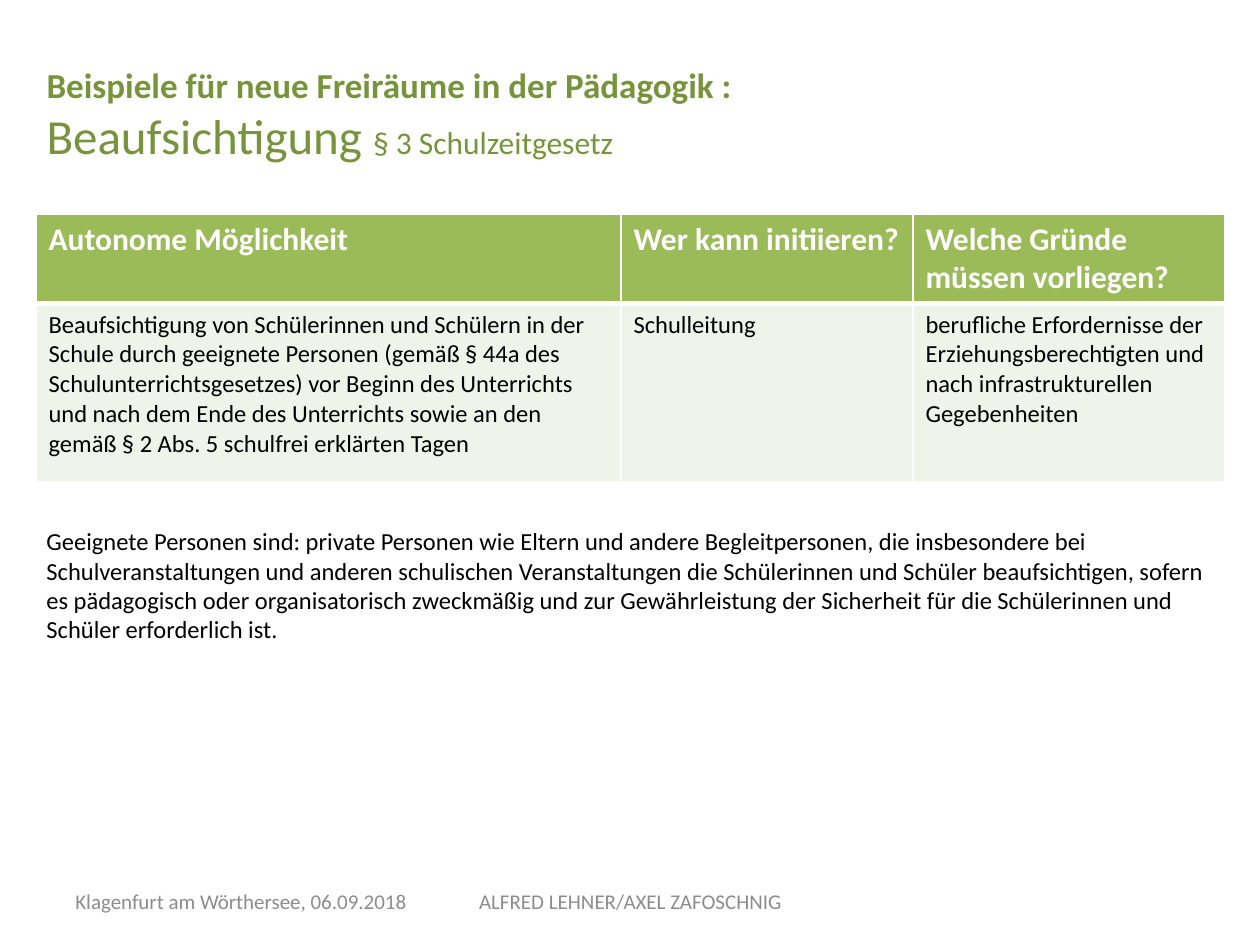
import lxml.etree
import pptx
import pptx.dml.color
import pptx.enum.text
import pptx.oxml.ns
import pptx.util

PX = 914400 / 126
THEME = {
    "font": "Calibri",
    "title": "77933C", "header": "9BBB59", "body": "EFF3EA",
    "white": "FFFFFF", "black": "000000", "footer": "8C8C8C",
    "title_size": 20, "subject_size": 28, "header_size": 18,
    "body_size": 14, "footer_size": 12,
}


def px(*lengths):
    return [pptx.util.Emu(round(length * PX)) for length in lengths]


def style_run(run, size, color, bold=False):
    run.font.name = THEME["font"]
    run.font.size = pptx.util.Pt(THEME[size])
    run.font.color.rgb = pptx.dml.color.RGBColor.from_string(THEME[color])
    run.font.bold = bold


presentation = pptx.Presentation()
presentation.slide_width, presentation.slide_height = px(1260, 945)
slide = presentation.slides.add_slide(presentation.slide_layouts[5])

# Title
title = slide.shapes.title
title.left, title.top, title.width, title.height = px(34, 57, 1129, 125)
title.text_frame.auto_size = pptx.enum.text.MSO_AUTO_SIZE.NONE
title.text_frame.vertical_anchor = pptx.enum.text.MSO_ANCHOR.TOP
paragraph = title.text_frame.paragraphs[0]
paragraph.text = "Beispiele für neue Freiräume in der Pädagogik :\vBeaufsichtigung "
paragraph.alignment = pptx.enum.text.PP_ALIGN.LEFT
paragraph.add_run().text = "§ 3 Schulzeitgesetz"
heading, subject, law = paragraph.runs
style_run(heading, "title_size", "title", True)
style_run(subject, "subject_size", "title")
style_run(law, "header_size", "title")

# Table
rows = [
    ["Autonome Möglichkeit", "Wer kann initiieren?", "Welche Gründe müssen vorliegen?"],
    [
        "Beaufsichtigung von Schülerinnen und Schülern in der Schule durch geeignete "
        "Personen (gemäß § 44a des Schulunterrichtsgesetzes) vor Beginn des Unterrichts "
        "und nach dem Ende des Unterrichts sowie an den gemäß § 2 Abs. 5 schulfrei "
        "erklärten Tagen",
        "Schulleitung",
        "berufliche Erfordernisse der Erziehungsberechtigten und nach infrastrukturellen "
        "Gegebenheiten",
    ],
]
table = slide.shapes.add_table(2, 3, *px(36, 214, 1189, 265)).table
for column, width in zip(table.columns, px(585, 292, 312)):
    column.width = width
for row, height in zip(table.rows, px(87, 178)):
    row.height = height

for row_index, texts in enumerate(rows):
    is_header = row_index == 0
    thick_side = "lnB" if is_header else "lnT"
    for column_index, text in enumerate(texts):
        cell = table.cell(row_index, column_index)
        cell.text_frame.text = text
        style_run(
            cell.text_frame.paragraphs[0].runs[0],
            "header_size" if is_header else "body_size",
            "white" if is_header else "black",
            is_header,
        )
        properties = cell._tc.get_or_add_tcPr()
        for side in ("lnL", "lnR", "lnT", "lnB"):
            border = lxml.etree.SubElement(properties, pptx.oxml.ns.qn(f"a:{side}"))
            border.set("w", str(pptx.util.Pt(3 if side == thick_side else 1)))
            fill = lxml.etree.SubElement(border, pptx.oxml.ns.qn("a:solidFill"))
            color = lxml.etree.SubElement(fill, pptx.oxml.ns.qn("a:srgbClr"))
            color.set("val", THEME["white"])
        cell.fill.solid()
        cell.fill.fore_color.rgb = pptx.dml.color.RGBColor.from_string(
            THEME["header" if is_header else "body"]
        )

# Explanation and footer
explanation = (
    "Geeignete Personen sind: private Personen wie Eltern und andere Begleitpersonen, "
    "die insbesondere bei Schulveranstaltungen und anderen schulischen Veranstaltungen "
    "die Schülerinnen und Schüler beaufsichtigen, sofern es pädagogisch oder "
    "organisatorisch zweckmäßig und zur Gewährleistung der Sicherheit für die "
    "Schülerinnen und Schüler erforderlich ist."
)
LEFT, CENTER = pptx.enum.text.PP_ALIGN.LEFT, pptx.enum.text.PP_ALIGN.CENTER
TOP, MIDDLE = pptx.enum.text.MSO_ANCHOR.TOP, pptx.enum.text.MSO_ANCHOR.MIDDLE
text_boxes = [
    (explanation, (34, 520, 1191, 131), "body_size", "black", LEFT, TOP),
    ("Klagenfurt am Wörthersee, 06.09.2018", (63, 876, 368, 50),
     "footer_size", "footer", LEFT, MIDDLE),
    ("ALFRED LEHNER/AXEL ZAFOSCHNIG", (431, 876, 399, 50),
     "footer_size", "footer", CENTER, MIDDLE),
]
for text, box, size, color, alignment, anchor in text_boxes:
    text_frame = slide.shapes.add_textbox(*px(*box)).text_frame
    text_frame.word_wrap = True
    text_frame.vertical_anchor = anchor
    text_frame.text = text
    paragraph = text_frame.paragraphs[0]
    paragraph.alignment = alignment
    style_run(paragraph.runs[0], size, color)

presentation.save("out.pptx")
